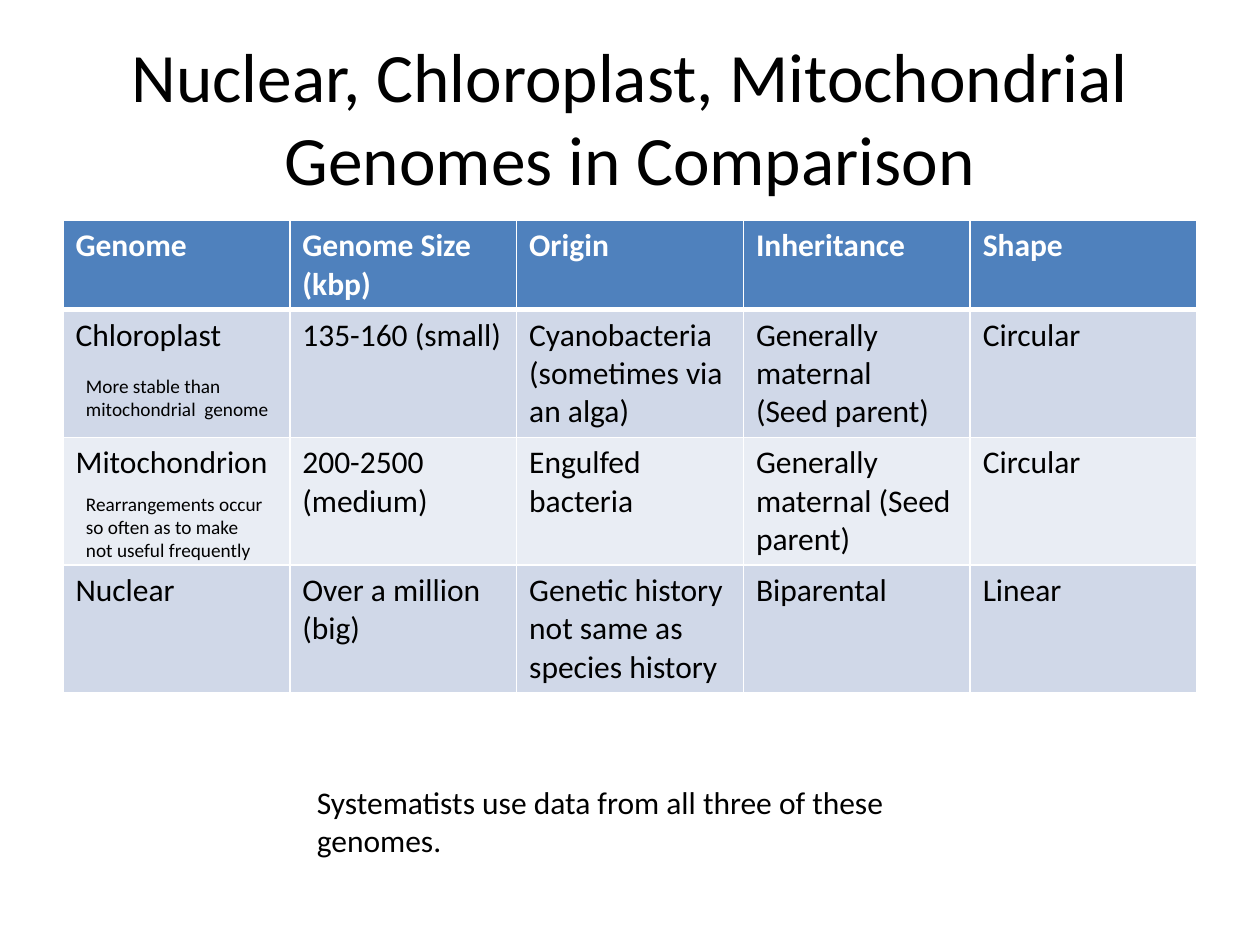
from lxml.etree import SubElement
from pptx import Presentation
from pptx.dml.color import RGBColor
from pptx.enum.text import MSO_ANCHOR, PP_ALIGN
from pptx.oxml.ns import qn
from pptx.util import Pt

BLACK = RGBColor(0x00, 0x00, 0x00)
WHITE = RGBColor(0xFF, 0xFF, 0xFF)
HEADER_BLUE = RGBColor(0x4F, 0x81, 0xBD)
BAND_DARK = RGBColor(0xD0, 0xD8, 0xE8)
BAND_LIGHT = RGBColor(0xE9, 0xED, 0xF4)

GENOMES = [
    ["Genome", "Genome Size (kbp)", "Origin", "Inheritance", "Shape"],
    ["Chloroplast", "135-160 (small)", "Cyanobacteria (sometimes via an alga)",
     "Generally  maternal  (Seed parent)", "Circular"],
    ["Mitochondrion", "200-2500 (medium)", "Engulfed bacteria",
     "Generally maternal (Seed parent)", "Circular"],
    ["Nuclear", "Over a million (big)",
     "Genetic history not same as species history", "Biparental", "Linear"],
]
HEADER_HEIGHT = 51
NOTES = [
    (50.5, 34, "More stable than  mitochondrial  genome"),
    (117.5, 47.5, "Rearrangements occur so often as to make  not useful frequently"),
]


def write(frame, wording, size, color=BLACK, bold=False, align=PP_ALIGN.LEFT):
    paragraph = frame.paragraphs[0]
    paragraph.alignment = align
    run = paragraph.add_run()
    run.text = wording
    for name, value in {"name": "Calibri", "size": Pt(size), "bold": bold}.items():
        setattr(run.font, name, value)
    run.font.color.rgb = color


def add_text(slide, box, wording, size, anchor=MSO_ANCHOR.TOP, align=PP_ALIGN.LEFT):
    frame = slide.shapes.add_textbox(*map(Pt, box)).text_frame
    for name, value in {"word_wrap": True, "vertical_anchor": anchor}.items():
        setattr(frame, name, value)
    write(frame, wording, size, align=align)


def add_borders(cell, widths):
    properties = cell._tc.get_or_add_tcPr()
    for side, width in widths.items():
        line = SubElement(properties, qn(f"a:ln{side}"), w=str(Pt(width)))
        fill = SubElement(line, qn("a:solidFill"))
        SubElement(fill, qn("a:srgbClr"), val=str(WHITE))


def add_genome_table(slide, box):
    left, top, width, height = box
    table = slide.shapes.add_table(
        len(GENOMES), len(GENOMES[0]), Pt(left), Pt(top), Pt(width), Pt(height)
    ).table
    for column in table.columns:
        column.width = Pt(width / len(GENOMES[0]))
    body_height = (height - HEADER_HEIGHT) / (len(GENOMES) - 1)
    for index, genome in enumerate(GENOMES):
        is_header = index == 0
        table.rows[index].height = Pt(HEADER_HEIGHT if is_header else body_height)
        band = HEADER_BLUE if is_header else (BAND_LIGHT, BAND_DARK)[index % 2]
        for cell, wording in zip(table.rows[index].cells, genome):
            write(cell.text_frame, wording, 18, WHITE if is_header else BLACK, is_header)
            add_borders(cell, {"L": 1, "R": 1, "T": 3 if index == 1 else 1,
                               "B": 3 if is_header else 1})
            cell.fill.solid()
            cell.fill.fore_color.rgb = band


def add_genome_notes(slide, box):
    left, top, width, _ = box
    for offset, height, wording in NOTES:
        add_text(slide, (left, top + HEADER_HEIGHT + offset - 17, width, height), wording, 11)


def build_comparison_slide(slide, box):
    left, top, width, _ = box
    add_text(slide, (left, top, width, 90),
             "Nuclear, Chloroplast, Mitochondrial Genomes in Comparison",
             39.6, MSO_ANCHOR.MIDDLE, PP_ALIGN.CENTER)
    add_genome_table(slide, (left, top + 104.4, width, 270))
    add_genome_notes(slide, (left + 6, top + 104.4, 120, 270))
    add_text(slide, (left + 138, top + 422.5, 408, 51),
             "Systematists use data from all three of these genomes.", 18)


def main():
    deck = Presentation()
    deck.slide_width, deck.slide_height = Pt(720), Pt(540)
    slide = deck.slides.add_slide(deck.slide_layouts[6])
    build_comparison_slide(slide, (36, 21.6, 648, 480))
    deck.save("out.pptx")


if __name__ == "__main__":
    main()
